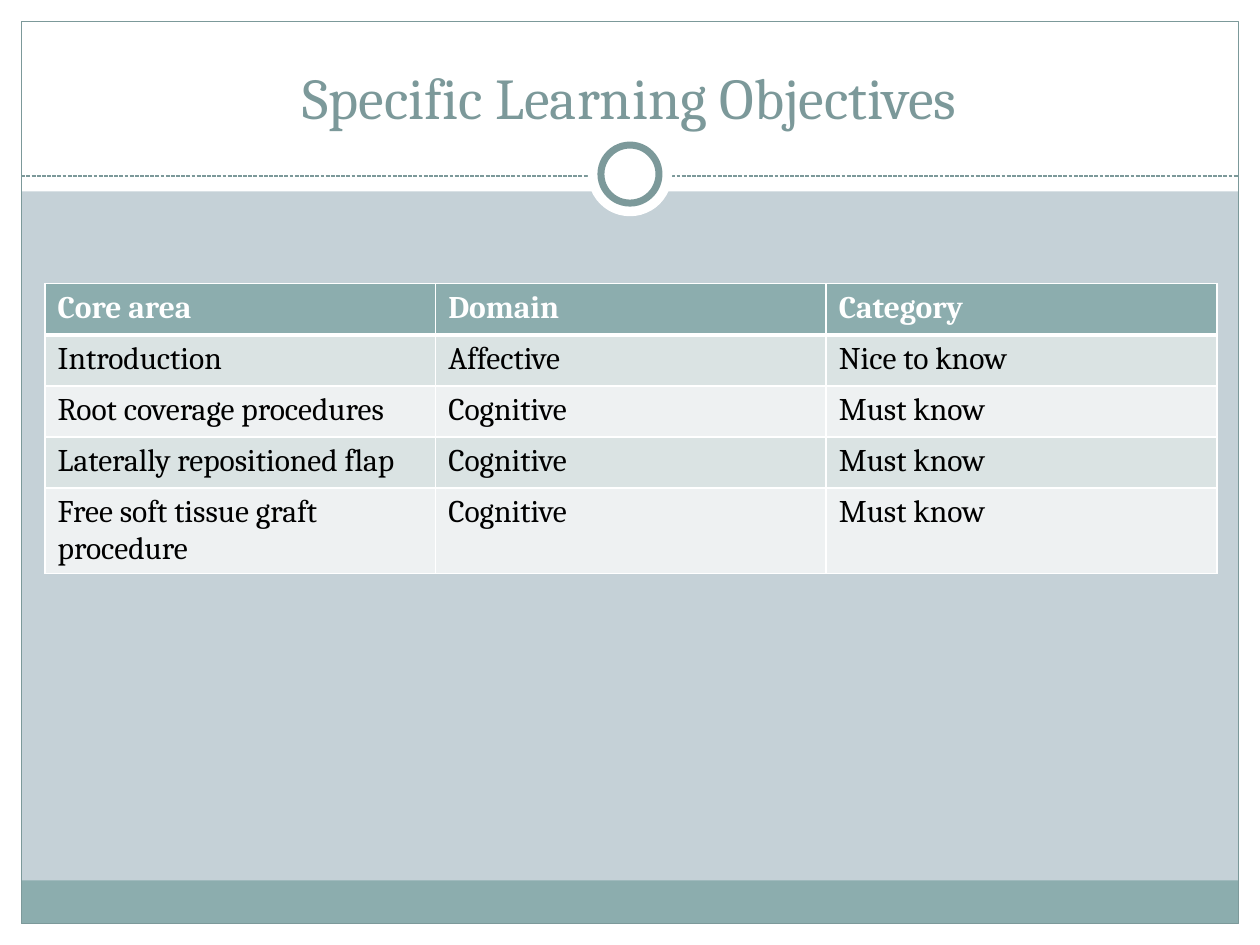
from dataclasses import dataclass

from lxml import etree
from pptx import Presentation
from pptx import util as u
from pptx.dml.color import RGBColor
from pptx.enum import dml, shapes, text
from pptx.oxml.ns import qn


@dataclass(frozen=True)
class Theme:
    """Colours, font and type sizes of the slide."""
    background: str = "C5D1D7"
    white: str = "FFFFFF"
    black: str = "000000"
    accent: str = "8CADAE"
    outline: str = "7C999A"
    bands: tuple = ("DAE3E3", "EEF1F2")
    font: str = "Cambria"
    title_size: int = 33
    body_size: int = 18


def colour(value):
    """Return an RGB colour from its hex value."""
    return RGBColor.from_string(value)


class SlideBuilder:
    """Draw styled elements on the current slide."""

    def __init__(self, slide, theme):
        """Keep the slide and theme, and fill the background."""
        self.slide = slide
        self.theme = theme
        slide.background.fill.solid()
        slide.background.fill.fore_color.rgb = colour(theme.background)

    def shape(self, kind, left, top, width, height, fill=None, line=None, weight=0.75):
        """Add a preset shape with optional fill and outline."""
        shape = self.slide.shapes.add_shape(kind, *map(u.Cm, (left, top, width, height)))
        shape.shadow.inherit = False
        for part, value in ((shape.fill, fill), (shape.line.fill, line)):
            if value:
                part.solid()
                part.fore_color.rgb = colour(value)
            else:
                part.background()
        if line:
            shape.line.width = u.Pt(weight)

    def circle(self, centre_x, centre_y, diameter, **style):
        """Add a circle around a centre point."""
        left, top = centre_x - diameter / 2, centre_y - diameter / 2
        self.shape(shapes.MSO_SHAPE.OVAL, left, top, diameter, diameter, **style)

    def dashed_line(self, left, right, height):
        """Add a horizontal dashed line."""
        connector = self.slide.shapes.add_connector(
            shapes.MSO_CONNECTOR.STRAIGHT, *map(u.Cm, (left, height, right, height)))
        connector.line.color.rgb = colour(self.theme.outline)
        connector.line.width = u.Pt(0.75)
        connector.line.dash_style = dml.MSO_LINE.SQUARE_DOT
        etree.SubElement(connector._element.spPr, qn("a:effectLst"))

    def set_text(self, frame, words, size, ink, bold=False):
        """Set one formatted paragraph and return it."""
        frame.text = words
        paragraph = frame.paragraphs[0]
        font = paragraph.runs[0].font
        values = {"name": self.theme.font, "size": u.Pt(size), "bold": bold}
        for name, value in values.items():
            setattr(font, name, value)
        font.color.rgb = colour(ink)
        return paragraph

    def title(self, words, left, top, width, height):
        """Place and format the title in front of the frame."""
        title = self.slide.shapes.title
        box = {"left": left, "top": top, "width": width, "height": height}
        for name, value in box.items():
            setattr(title, name, u.Cm(value))
        frame = title.text_frame
        paragraph = self.set_text(frame, words, self.theme.title_size, self.theme.outline)
        paragraph.alignment = text.PP_ALIGN.CENTER
        frame.vertical_anchor = text.MSO_ANCHOR.BOTTOM
        frame.word_wrap = True
        self.slide.shapes._spTree.append(title._element)

    def borders(self, cell, weights):
        """Draw white cell borders with a weight for each side."""
        properties = cell._tc.get_or_add_tcPr()
        for side, weight in weights.items():
            line = etree.SubElement(properties, qn(f"a:ln{side}"), w=str(u.Pt(weight)))
            fill = etree.SubElement(line, qn("a:solidFill"))
            etree.SubElement(fill, qn("a:srgbClr"), val=self.theme.white)

    def table(self, rows, left, top, width, row_height):
        """Add a table with a header row and alternating bands."""
        theme = self.theme
        size = map(u.Cm, (left, top, width, row_height * len(rows)))
        table = self.slide.shapes.add_table(len(rows), len(rows[0]), *size).table
        table.horz_banding = False
        for row_index, row in enumerate(rows):
            header = row_index == 0
            fill = theme.accent if header else theme.bands[(row_index - 1) % 2]
            ink = theme.white if header else theme.black
            weights = {"L": 1, "R": 1, "T": 3 if row_index == 1 else 1, "B": 3 if header else 1}
            for column_index, words in enumerate(row):
                cell = table.cell(row_index, column_index)
                self.set_text(cell.text_frame, words, theme.body_size, ink, header)
                self.borders(cell, weights)
                cell.fill.solid()
                cell.fill.fore_color.rgb = colour(fill)


def main():
    """Build the learning objectives slide."""
    theme = Theme()
    presentation = Presentation()
    width, height, margin = 25.4, 19.05, 0.43
    presentation.slide_width, presentation.slide_height = u.Cm(width), u.Cm(height)
    slide = presentation.slides.add_slide(presentation.slide_layouts[5])
    builder = SlideBuilder(slide, theme)

    rectangle = shapes.MSO_SHAPE.RECTANGLE
    inner_width, inner_height = width - 2 * margin, height - 2 * margin
    for box in (
        (0, height - margin, width, margin),
        (0, 0, width, 3.86),
        (0, 0, margin, height),
        (width - margin, 0, margin, height),
    ):
        builder.shape(rectangle, *box, fill=theme.white)
    builder.shape(rectangle, margin, 17.75, inner_width, 0.87, fill=theme.accent)
    builder.shape(rectangle, margin, margin, inner_width, inner_height, line=theme.outline)
    builder.dashed_line(margin, width - margin, 3.55)
    builder.circle(width / 2, 3.51, 1.7, fill=theme.white)
    builder.circle(width / 2, 3.51, 1.17, fill=theme.white, line=theme.outline, weight=4)

    builder.title("Specific Learning Objectives", 0.84, 0.64, 23.7, 2.12)
    builder.table([
        ("Core area", "Domain", "Category"),
        ("Introduction", "Affective", "Nice to know"),
        ("Root coverage procedures", "Cognitive", "Must know"),
        ("Laterally repositioned flap", "Cognitive", "Must know"),
        ("Free soft tissue graft procedure", "Cognitive", "Must know"),
    ], 0.91, 5.72, 23.62, 1.03)
    presentation.save("out.pptx")


if __name__ == "__main__":
    main()
